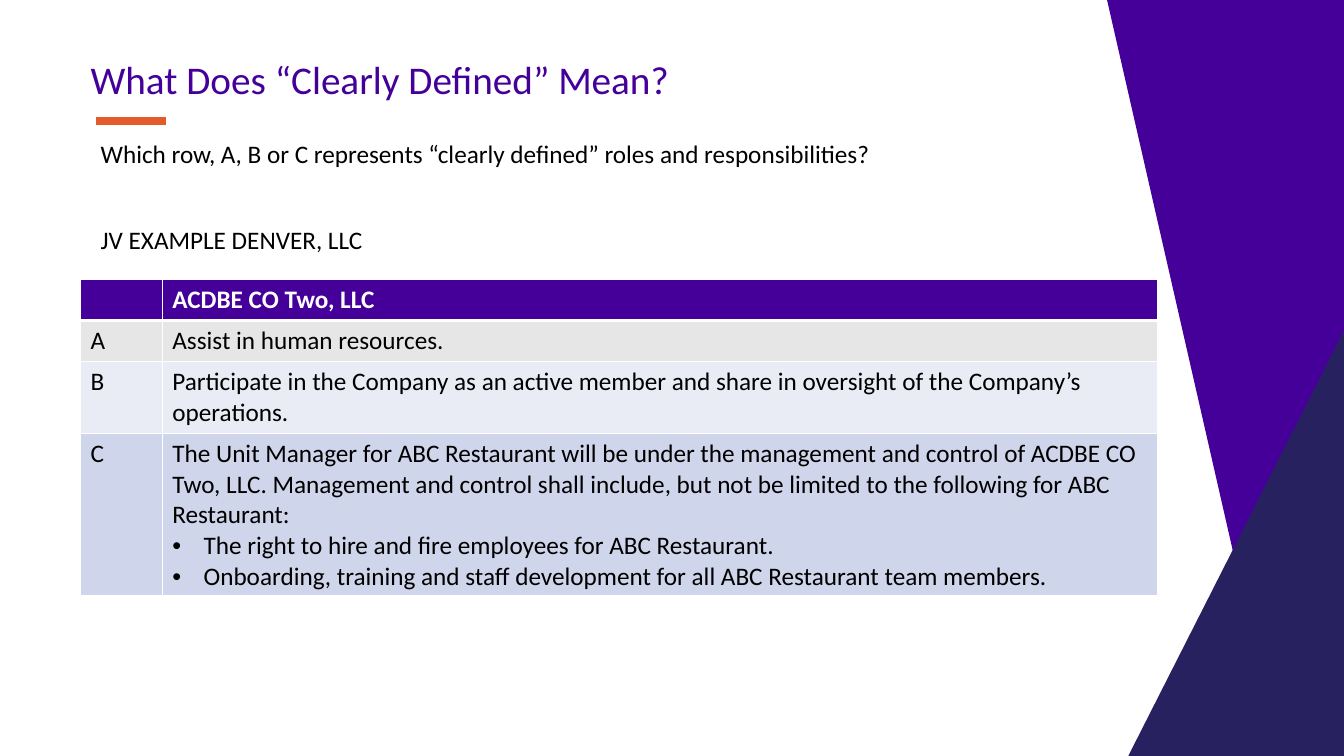
from lxml import etree
from pptx import Presentation
from pptx.dml.color import RGBColor
from pptx.enum.shapes import MSO_CONNECTOR
from pptx.enum.text import MSO_ANCHOR
from pptx.oxml.ns import qn
from pptx.util import Pt

STRAIGHT = MSO_CONNECTOR.STRAIGHT
TOP = MSO_ANCHOR.TOP
EMU_PER_PX = 9144  # 100 px to the inch
FONT = "Calibri"
PURPLE, NAVY, ORANGE = "440099", "282160", "E35B2A"
BLACK, WHITE = "000000", "FFFFFF"
BULLET_INDENT = 31


def px(length):
    return length * EMU_PER_PX


def color(value):
    return RGBColor.from_string(value)


class SlideBuilder:
    def __init__(self, page):
        self.page = page

    def style(self, para, size, text_color, bold=False):
        para.font.size = Pt(size)
        for span in para.runs:
            font = span.font
            font.name, font.size, font.bold = FONT, Pt(size), bold
            font.color.rgb = color(text_color)

    def polygon(self, points, fill):
        builder = self.page.shapes.build_freeform(*points[0], scale=EMU_PER_PX)
        builder.add_line_segments(points[1:], close=True)
        shape = builder.convert_to_shape()
        shape.shadow.inherit = False
        shape.fill.solid()
        shape.fill.fore_color.rgb = color(fill)
        shape.line.fill.background()

    def rule(self, left, right, y, line_color, width):
        line = self.page.shapes.add_connector(
            STRAIGHT, px(left), px(y), px(right), px(y))
        line.line.color.rgb = color(line_color)
        line.line.width = Pt(width)
        etree.SubElement(line._element.spPr, qn("a:effectLst"))

    def text(self, bounds, lines, size, text_color, gap=0, spacing=None):
        """Write one paragraph per line, with gap points between them."""
        box = self.page.shapes.add_textbox(*map(px, bounds))
        frame = box.text_frame
        frame.word_wrap = True
        frame.vertical_anchor = TOP
        frame.text = "\n".join(lines)
        for index, para in enumerate(frame.paragraphs):
            para.line_spacing = spacing
            if index:
                para.space_before = Pt(gap)
            self.style(para, size, text_color)

    def bullet(self, para):
        properties = para._p.get_or_add_pPr()
        properties.set("marL", str(px(BULLET_INDENT)))
        properties.set("indent", str(-px(BULLET_INDENT)))
        etree.SubElement(properties, qn("a:buFont"), typeface="Arial")
        etree.SubElement(properties, qn("a:buChar"), char="•")

    def borders(self, cell, widths):
        """Draw white borders; widths maps each side tag to points."""
        properties = cell._tc.get_or_add_tcPr()
        for side, width in widths.items():
            line = etree.SubElement(properties, qn(f"a:{side}"), w=str(Pt(width)))
            fill = etree.SubElement(line, qn("a:solidFill"))
            etree.SubElement(fill, qn("a:srgbClr"), val=WHITE)

    def table(self, left, top, widths, heights, rows, fills):
        """Build a table with a header row; lines after a cell's first are bullets."""
        grid = self.page.shapes.add_table(
            len(rows), len(widths), px(left), px(top),
            px(sum(widths)), px(sum(heights))).table
        for column, width in zip(grid.columns, widths):
            column.width = px(width)
        for index, (row, height) in enumerate(zip(grid.rows, heights)):
            row.height = px(height)
            header = index == 0
            sides = {"lnL": 1, "lnR": 1, "lnT": 3 if index == 1 else 1,
                     "lnB": 3 if header else 1}
            for cell, content in zip(row.cells, rows[index]):
                self.borders(cell, sides)
                cell.fill.solid()
                cell.fill.fore_color.rgb = color(fills[index])
                cell.text_frame.text = content
                for number, para in enumerate(cell.text_frame.paragraphs):
                    if number:
                        self.bullet(para)
                    self.style(para, 18, WHITE if header else BLACK, header)


def main():
    deck = Presentation()
    deck.slide_width, deck.slide_height = px(1333), px(750)
    slide = SlideBuilder(deck.slides.add_slide(deck.slide_layouts[6]))

    slide.rule(95, 165, 120, ORANGE, 6)
    slide.polygon([(1335, -1), (1337, 751), (1269, 749), (1098, 0)], PURPLE)
    slide.polygon([(1337, 751), (1336, 322), (1119, 750)], NAVY)
    slide.text((80, 55, 1038, 63), ["What Does “Clearly Defined” Mean?"],
               28, PURPLE, spacing=0.9)

    rows = [
        ("", "ACDBE CO Two, LLC"),
        ("A", "Assist in human resources."),
        ("B", "Participate in the Company as an active member and share in "
              "oversight of the Company’s operations."),
        ("C", "The Unit Manager for ABC Restaurant will be under the management "
              "and control of ACDBE CO Two, LLC. Management and control shall "
              "include, but not be limited to the following for ABC Restaurant:\n"
              "The right to hire and fire employees for ABC Restaurant.\n"
              "Onboarding, training and staff development for all ABC Restaurant "
              "team members."),
    ]
    slide.table(80, 277, [81, 987], [41, 41, 71, 161], rows,
                [PURPLE, "E7E6E6", "E9EBF5", "CFD5EA"])
    slide.text((90, 132, 1038, 128),
               ["Which row, A, B or C represents “clearly defined” roles and "
                "responsibilities?", "JV EXAMPLE DENVER, LLC"],
               18, BLACK, gap=40)
    deck.save("out.pptx")


if __name__ == "__main__":
    main()
